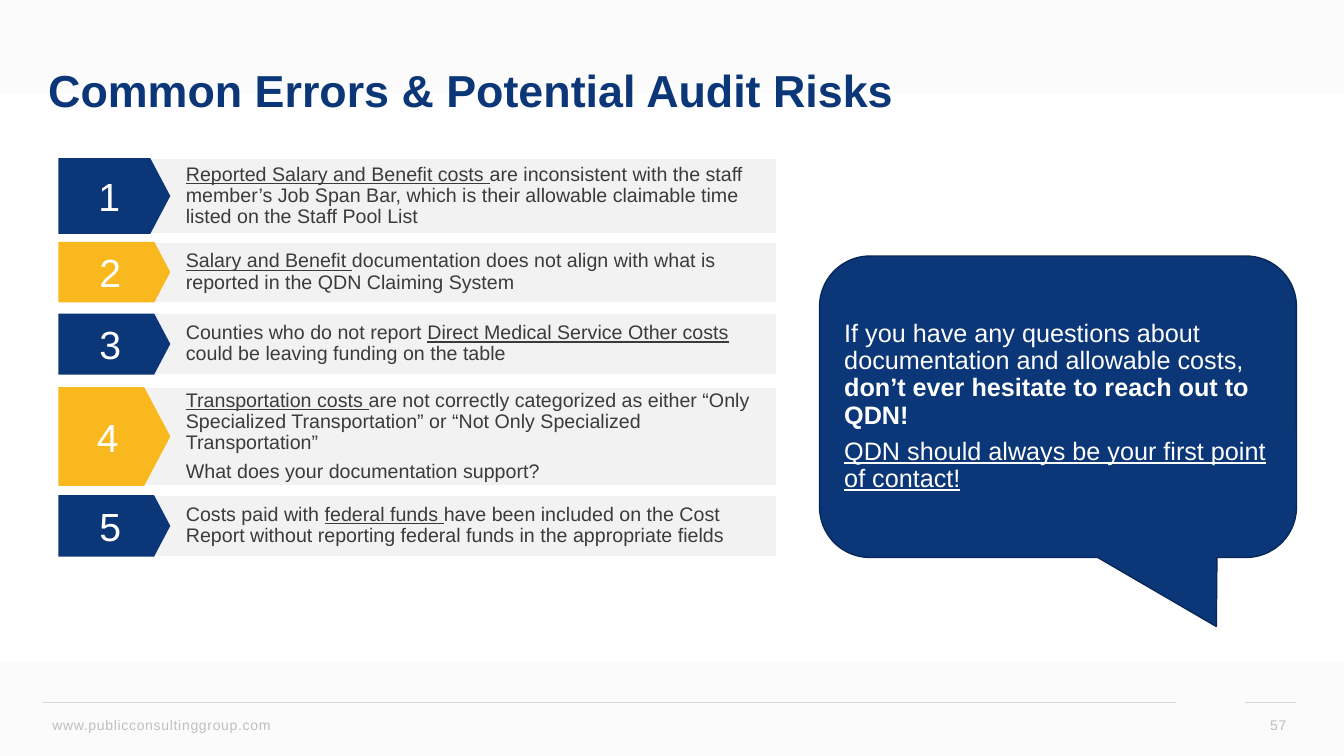
from lxml.etree import SubElement
from pptx import Presentation
from pptx.dml.color import RGBColor
from pptx.enum.shapes import MSO_CONNECTOR, MSO_SHAPE
from pptx.enum.text import MSO_ANCHOR, PP_ALIGN
from pptx.oxml.ns import qn
from pptx.util import Inches, Pt

NAVY = RGBColor(0x0B, 0x36, 0x77)
EDGE = RGBColor(0x08, 0x28, 0x58)
GOLD = RGBColor(0xFA, 0xB8, 0x1F)
PALE = RGBColor(0xF2, 0xF2, 0xF2)
MIST = RGBColor(0xFB, 0xFB, 0xFB)
RULE = RGBColor(0xD9, 0xD9, 0xD9)
GREY = RGBColor(0xBF, 0xBF, 0xBF)
INK = RGBColor(0x3B, 0x3B, 0x3B)
WHITE = RGBColor(0xFF, 0xFF, 0xFF)

# Content: a paragraph is a list of (text, style), style u = underlined, b = bold
TITLE = "Common Errors & Potential Audit Risks"
SITE, PAGE = "www.publicconsultinggroup.com", "57"
# Each error: top and height in percent of the slide, then its paragraphs
ERRORS = [
    (20.93, 10, [[
        ("Reported Salary and Benefit costs ", "u"),
        ("are inconsistent with the staff member’s Job Span Bar, which is their "
         "allowable claimable time listed on the Staff Pool List", "")]]),
    (32, 8, [[
        ("Salary and Benefit ", "u"),
        ("documentation does not align with what is reported in the "
         "QDN Claiming System", "")]]),
    (41.47, 8.07, [[
        ("Counties who do not report ", ""),
        ("Direct Medical Service Other costs ", "u"),
        ("could be leaving funding on the table", "")]]),
    (51.2, 13.07, [
        [("Transportation costs ", "u"),
         ("are not correctly categorized as either “Only Specialized "
          "Transportation” or “Not Only Specialized Transportation”", "")],
        [("What does your documentation support?", "")]]),
    (65.5, 8.13, [[
        ("Costs paid with ", ""),
        ("federal funds ", "u"),
        ("have been included on the Cost Report without reporting federal "
         "funds in the appropriate fields", "")]]),
]
ADVICE = [
    [("If you have any questions about documentation and allowable costs, ", ""),
     ("\n", ""),
     ("don’t ever hesitate to reach out to QDN!", "b")],
    [("QDN should always be your first point of contact!", "u")],
]

deck = Presentation()
deck.slide_width, deck.slide_height = Inches(13.33), Inches(7.5)
slide = deck.slides.add_slide(deck.slide_layouts[6])
shapes = slide.shapes


def place(x, y, w, h):
    """Turn percent of the slide into lengths."""
    wide, high = deck.slide_width / 100, deck.slide_height / 100
    return int(x * wide), int(y * high), int(w * wide), int(h * high)


def draw(kind, spot, fill=None, edge=None):
    shape = shapes.add_shape(kind, *place(*spot))
    shape.shadow.inherit = False
    if fill is not None:
        shape.fill.solid()
        shape.fill.fore_color.rgb = fill
    if edge is None:
        shape.line.fill.background()
    else:
        shape.line.color.rgb = edge
        shape.line.width = Pt(1)
    return shape


def write(shape, paras, size, color, align=PP_ALIGN.LEFT, bold=None,
          space=None, after=0, track=0):
    frame = shape.text_frame
    frame.word_wrap = True
    frame.vertical_anchor = MSO_ANCHOR.MIDDLE
    for i, parts in enumerate(paras):
        para = frame.add_paragraph() if i else frame.paragraphs[0]
        para.alignment = align
        if space:
            para.line_spacing = space
        para.space_after = Pt(after)
        font = para.font
        font.name, font.size, font.bold = "Arial", Pt(size), bold
        font.color.rgb = color
        for text, style in parts:
            if text == "\n":
                para.add_line_break()
                continue
            run = para.add_run()
            run.text = text
            if style == "u":
                run.font.underline = True
            if style == "b":
                run.font.bold = True
            if track:
                run.font._element.set("spc", str(track)) if hasattr(
                    run.font, "_element") else run._r.get_or_add_rPr().set(
                    "spc", str(track))


def label(text, spot, size, color, **look):
    box = shapes.add_textbox(*place(*spot))
    write(box, [[(text, "")]], size, color, **look)


# Soft bands at the top and bottom
for top, turn in ((0, 0), (75.33, 180)):
    band = draw(MSO_SHAPE.RECTANGLE, (0, top, 100, 24.67))
    band.fill.gradient()
    band.fill.gradient_angle = 270
    for stop, color, pos in zip(band.fill.gradient_stops, (MIST, WHITE), (0, 1)):
        stop.color.rgb = color
        stop.position = pos
    band.rotation = turn

# Footer rules
for left, right in ((3.15, 87.53), (92.63, 96.45)):
    x, y, w, _ = place(left, 92.93, right - left, 0)
    line = shapes.add_connector(MSO_CONNECTOR.STRAIGHT, x, y, x + w, y)
    line.line.color.rgb = RULE
    line.line.width = Pt(0.5)
    SubElement(line._element.spPr, qn("a:effectLst"))

# Numbered errors
for num, (top, high, paras) in enumerate(ERRORS, 1):
    bar = draw(MSO_SHAPE.RECTANGLE, (10.53, top, 47.25, high), PALE, WHITE)
    frame = bar.text_frame
    frame.margin_left = Inches(0.44)
    frame.margin_right = frame.margin_top = frame.margin_bottom = Inches(0.06)
    write(bar, paras, 14, INK, space=0.9, after=4.9)
    tag = draw(MSO_SHAPE.PENTAGON, (4.35, top, 8.32, high),
               NAVY if num % 2 else GOLD)
    tag.adjustments[0] = 0.264
    write(tag, [[(str(num), "")]], 28, WHITE, PP_ALIGN.CENTER)

# Advice callout
call = draw(MSO_SHAPE.ROUNDED_RECTANGULAR_CALLOUT,
            (60.98, 33.87, 35.48, 39.87), NAVY, EDGE)
for i, share in enumerate((0.332, 0.729, 0.167)):
    call.adjustments[i] = share
write(call, ADVICE, 18, WHITE, space=0.9, after=6.3)

# Title and footer text
label(TITLE, (2.85, 5.33, 93.45, 14), 32, NAVY, bold=True, space=0.9)
label(SITE, (3.15, 94, 29, 3.73), 10, GREY, track=50)
label(PAGE, (93.3, 93.2, 3.15, 5.33), 10, GREY, align=PP_ALIGN.RIGHT, track=50)

deck.save("out.pptx")
